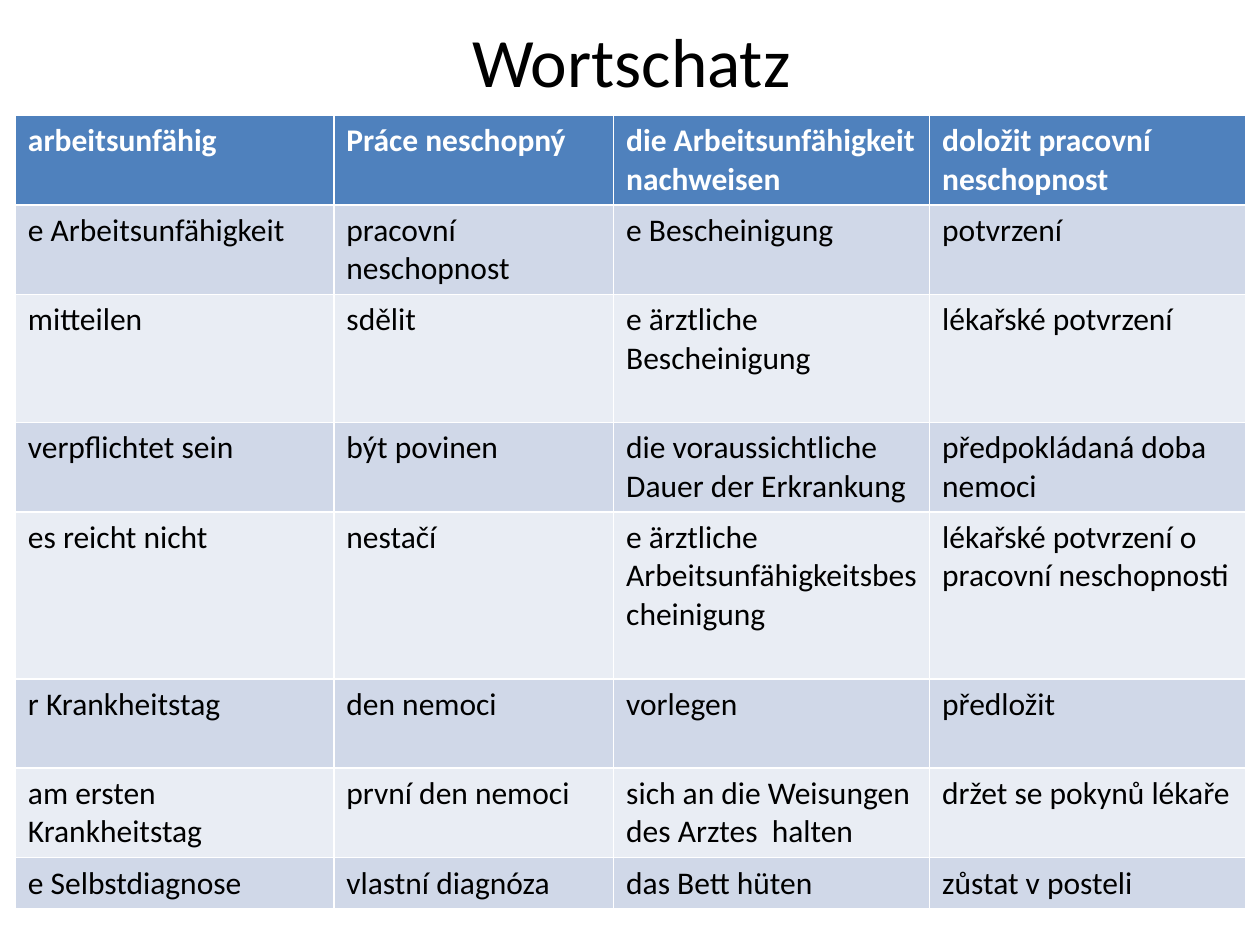
"""Build a German-Czech vocabulary slide with a title and a banded table."""

from dataclasses import dataclass

from pptx import Presentation
from pptx.dml.color import RGBColor
from pptx.enum.text import MSO_ANCHOR, PP_ALIGN
from pptx.slide import Slide
from pptx.table import _Cell
from pptx.text.text import TextFrame
from pptx.util import Cm, Pt

CENTER, LEFT = PP_ALIGN.CENTER, PP_ALIGN.LEFT
MIDDLE, TOP = MSO_ANCHOR.MIDDLE, MSO_ANCHOR.TOP
TITLE_ONLY = 5


@dataclass(frozen=True)
class Theme:
    font: str = "Calibri"
    title_size: float = 39.6
    table_size: float = 18
    text: str = "000000"
    header_text: str = "FFFFFF"
    header_fill: str = "4F81BD"
    bands: tuple[str, str] = ("D0D8E8", "E9EDF4")


@dataclass(frozen=True)
class VocabularyRow:
    height: float
    words: tuple[str, str, str, str]


THEME = Theme()
COLUMN_WIDTHS = (6.42, 5.64, 6.37, 6.37)
TWO_LINES = 1.8
VOCABULARY = (
    VocabularyRow(TWO_LINES, ("arbeitsunfähig", "Práce neschopný",
                              "die Arbeitsunfähigkeit nachweisen", "doložit pracovní neschopnost")),
    VocabularyRow(TWO_LINES, ("e Arbeitsunfähigkeit", "pracovní neschopnost",
                              "e Bescheinigung", "potvrzení")),
    VocabularyRow(2.58, ("mitteilen", "sdělit",
                         "e ärztliche Bescheinigung", "lékařské potvrzení")),
    VocabularyRow(TWO_LINES, ("verpflichtet sein", "být povinen",
                              "die voraussichtliche Dauer der Erkrankung",
                              "předpokládaná doba nemoci")),
    VocabularyRow(3.36, ("es reicht nicht", "nestačí",
                         "e ärztliche Arbeitsunfähigkeitsbescheinigung",
                         "lékařské potvrzení o pracovní neschopnosti")),
    VocabularyRow(TWO_LINES, ("r Krankheitstag", "den nemoci", "vorlegen", "předložit")),
    VocabularyRow(TWO_LINES, ("am ersten Krankheitstag", "první den nemoci",
                              "sich an die Weisungen des Arztes  halten",
                              "držet se pokynů lékaře")),
    VocabularyRow(1.02, ("e Selbstdiagnose", "vlastní diagnóza",
                         "das Bett hüten", "zůstat v posteli")),
)


def write_text(frame: TextFrame, text: str, *, size: float, color: str = THEME.text,
               bold: bool = False, alignment: PP_ALIGN = LEFT) -> None:
    paragraph = frame.paragraphs[0]
    paragraph.alignment = alignment
    run = paragraph.add_run()
    run.text = text
    run.font.name = THEME.font
    run.font.size = Pt(size)
    run.font.bold = bold
    run.font.color.rgb = RGBColor.from_string(color)


def add_title(slide: Slide, text: str) -> None:
    title = slide.shapes.title
    title.left, title.top, title.width, title.height = Cm(1.3), Cm(0.33), Cm(22.86), Cm(1.75)
    title.text_frame.vertical_anchor = MIDDLE
    write_text(title.text_frame, text, size=THEME.title_size, alignment=CENTER)


def format_cell(cell: _Cell, text: str, row_index: int) -> None:
    is_header = row_index == 0
    fill = THEME.header_fill if is_header else THEME.bands[(row_index - 1) % 2]
    cell.fill.solid()
    cell.fill.fore_color.rgb = RGBColor.from_string(fill)
    cell.vertical_anchor = TOP
    write_text(cell.text_frame, text, size=THEME.table_size, bold=is_header,
               color=THEME.header_text if is_header else THEME.text)


def add_vocabulary(slide: Slide, rows: tuple[VocabularyRow, ...]) -> None:
    table = slide.shapes.add_table(
        len(rows), len(COLUMN_WIDTHS), Cm(0.31), Cm(2.33),
        Cm(sum(COLUMN_WIDTHS)), Cm(sum(row.height for row in rows))).table
    for column, width in zip(table.columns, COLUMN_WIDTHS):
        column.width = Cm(width)
    for row_index, row in enumerate(rows):
        table.rows[row_index].height = Cm(row.height)
        for column_index, word in enumerate(row.words):
            format_cell(table.cell(row_index, column_index), word, row_index)


def main() -> None:
    presentation = Presentation()
    presentation.slide_width, presentation.slide_height = Cm(25.4), Cm(19.05)
    slide = presentation.slides.add_slide(presentation.slide_layouts[TITLE_ONLY])
    add_title(slide, "Wortschatz")
    add_vocabulary(slide, VOCABULARY)
    presentation.save("out.pptx")


if __name__ == "__main__":
    main()
